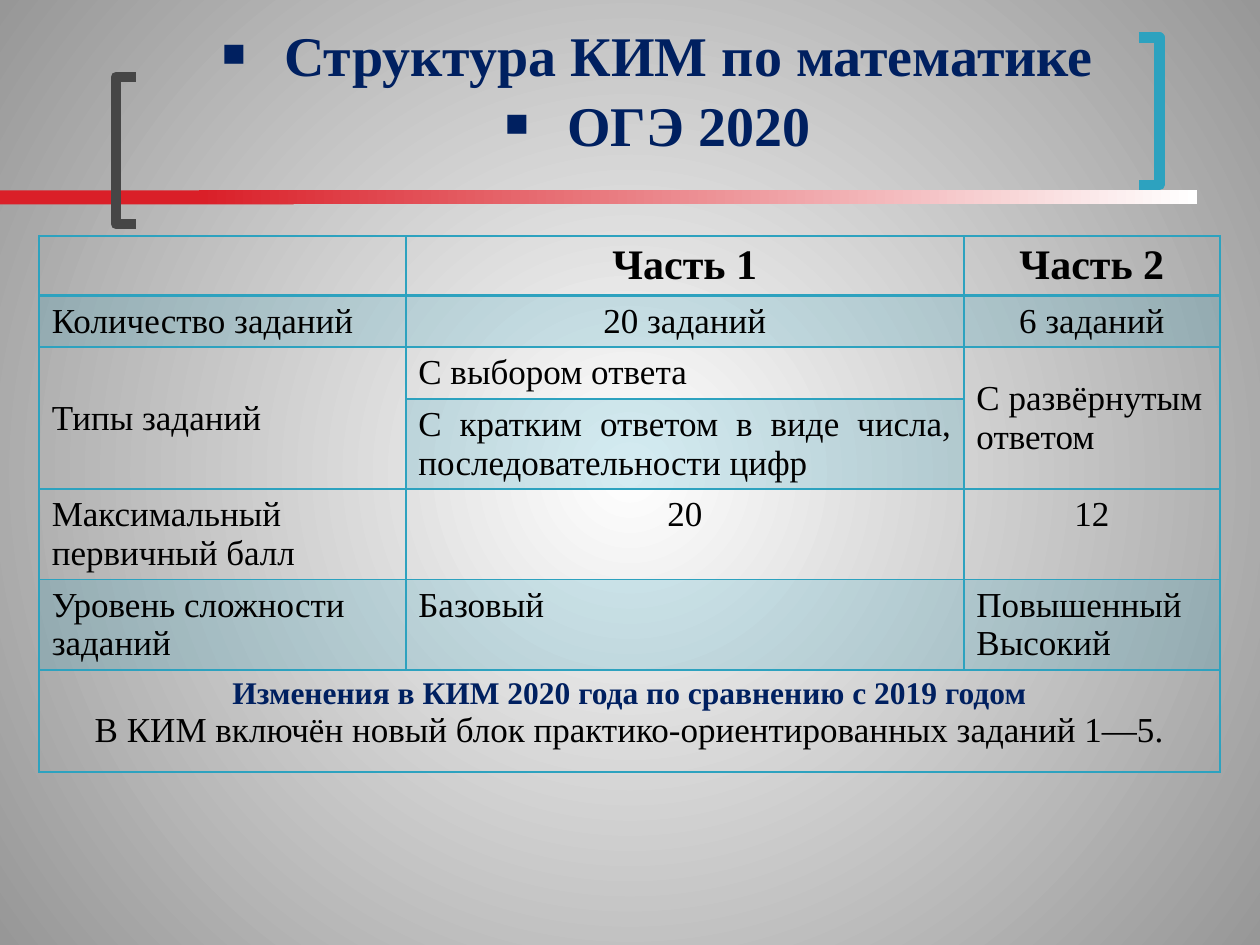
from lxml.etree import SubElement as Sub
from pptx import Presentation
from pptx.dml.color import RGBColor as Rgb
from pptx.enum.shapes import MSO_SHAPE as Kind
from pptx.enum.text import MSO_ANCHOR as Anchor, MSO_AUTO_SIZE as Auto, PP_ALIGN as Align
from pptx.oxml.ns import qn
from pptx.util import Cm, Pt

HUES = {"red": "DA1F28", "white": "FFFFFF", "edge": "979797", "grey": "464646",
        "teal": "2DA2BF", "navy": "002060", "black": "000000"}
LEFT, MID, JUST = Align.LEFT, Align.CENTER, Align.JUSTIFY


class Deck:
    """Holds the style and the current slide."""
    face = "Times New Roman"

    def __init__(self):
        self.prs = Presentation()
        self.prs.slide_width, self.prs.slide_height = Cm(25.4), Cm(19.05)
        self.slide = self.prs.slides.add_slide(self.prs.slide_layouts[5])

    def hue(self, name):
        return Rgb.from_string(HUES[name])

    def blend(self, fill, first, last):
        fill.gradient()
        for stop, name, pos in zip(fill.gradient_stops, (first, last), (0, 1)):
            stop.color.rgb, stop.position = self.hue(name), pos

    def back(self, inner, outer):
        """Fill the background with a gradient round its centre."""
        self.blend(self.slide.background.fill, inner, outer)
        grad = next(self.slide.element.iter(qn("a:gradFill")))
        grad.remove(grad.find(qn("a:lin")))
        ring = Sub(grad, qn("a:path"), path="circle")
        Sub(ring, qn("a:fillToRect"), l="50000", t="50000", r="50000", b="50000")

    def bar(self, x, y, w, h, first, last=None):
        box = self.slide.shapes.add_shape(Kind.RECTANGLE, Cm(x), Cm(y), Cm(w), Cm(h))
        box.shadow.inherit = False
        box.line.fill.background()
        if last:
            self.blend(box.fill, first, last)
            box.fill.gradient_angle = 0
        else:
            box.fill.solid()
            box.fill.fore_color.rgb = self.hue(first)

    def hook(self, tip, spine, top, base, name):
        """Draw a square bracket whose ends point from spine to tip."""
        pen = self.slide.shapes.build_freeform(Cm(tip), Cm(top))
        pen.add_line_segments([(Cm(spine), Cm(top)), (Cm(spine), Cm(base)),
                               (Cm(tip), Cm(base))], close=False)
        form = pen.convert_to_shape()
        form.shadow.inherit = False
        form.fill.background()
        form.line.color.rgb, form.line.width = self.hue(name), Pt(6)

    def words(self, frame, lines, size, align, name="black", bold=False):
        frame.text = "\n".join(lines)
        for para in frame.paragraphs:
            self.style(para, size, align, name, bold)

    def style(self, para, size, align, name, bold):
        para.alignment = align
        font = para.font
        font.name, font.size, font.bold = self.face, Pt(size), bold
        font.color.rgb = self.hue(name)

    def title(self, x, y, w, h, lines):
        head = self.slide.shapes.title
        head.left, head.top, head.width, head.height = Cm(x), Cm(y), Cm(w), Cm(h)
        frame = head.text_frame
        frame.auto_size, frame.vertical_anchor = Auto.NONE, Anchor.TOP
        self.words(frame, lines, 32, MID, "navy", True)
        for para in frame.paragraphs:
            para.space_before = Pt(1.5)
            self.mark(para)

    def mark(self, para):
        """Give the paragraph a square bullet on a hanging indent."""
        prop = para._p.get_or_add_pPr()
        prop.set("marL", str(Cm(1.25)))
        prop.set("indent", str(-Cm(1.25)))
        last = prop.find(qn("a:defRPr"))
        for tag, key, value in (("a:buSzPct", "val", "70000"),
                                ("a:buFont", "typeface", self.face),
                                ("a:buChar", "char", "■")):
            item = Sub(prop, qn(tag))
            item.set(key, value)
            last.addprevious(item)

    def grid(self, x, y, cols, rows):
        table = self.slide.shapes.add_table(len(rows), len(cols), Cm(x), Cm(y),
                                            Cm(sum(cols)), Cm(sum(rows))).table
        table.first_row = table.horz_banding = False
        for col, size in zip(table.columns, cols):
            col.width = Cm(size)
        for row, size in zip(table.rows, rows):
            row.height = Cm(size)
        return table

    def cell(self, cell, tint, top=1, base=1):
        """Set the borders, in points, and the fill of a cell."""
        prop = cell._tc.get_or_add_tcPr()
        for side, width in zip("LRTB", (1, 1, top, base)):
            line = Sub(prop, qn(f"a:ln{side}"), w=str(Pt(width)))
            Sub(Sub(line, qn("a:solidFill")), qn("a:srgbClr"), val=HUES["teal"])
        if tint:
            cell.fill.solid()
            cell.fill.fore_color.rgb = self.hue("teal")
            Sub(next(prop.find(qn("a:solidFill")).iter(qn("a:srgbClr"))),
                qn("a:alpha"), val="20000")
        else:
            cell.fill.background()


def main():
    deck = Deck()
    deck.back("white", "edge")
    deck.bar(0, 3.84, 5.92, 0.28, "red")
    deck.bar(4.01, 3.84, 20.12, 0.28, "red", "white")
    deck.hook(2.74, 2.34, 1.55, 4.52, "grey")
    deck.hook(22.96, 23.37, 0.76, 3.73, "teal")
    deck.title(2.59, 0.28, 21.34, 4.09, ["Структура КИМ по математике", "ОГЭ 2020"])

    table = deck.grid(0.79, 4.76, (7.39, 11.25, 5.16),
                      (1.2, 1.04, 1.04, 1.81, 1.81, 1.81, 2.06))
    tints = {(1, 0), (1, 1), (1, 2), (3, 1), (5, 0), (5, 1), (5, 2)}
    for r in range(len(table.rows)):
        for c in range(len(table.columns)):
            deck.cell(table.cell(r, c), (r, c) in tints,
                      2 if r == 1 else 1, 2 if r == 0 else 1)
    for first, last in (((2, 0), (3, 0)), ((2, 2), (3, 2)), ((6, 0), (6, 2))):
        table.cell(*first).merge(table.cell(*last))

    for c, text in ((1, "Часть 1"), (2, "Часть 2")):
        deck.words(table.cell(0, c).text_frame, [text], 24, MID, bold=True)
    body = [
        (1, 0, LEFT, ["Количество заданий"]),
        (1, 1, MID, ["20 заданий"]),
        (1, 2, MID, ["6 заданий"]),
        (2, 0, LEFT, ["Типы заданий"]),
        (2, 1, LEFT, ["С выбором ответа"]),
        (2, 2, LEFT, ["С развёрнутым ответом"]),
        (3, 1, JUST, ["С кратким ответом в виде числа, последовательности цифр"]),
        (4, 0, JUST, ["Максимальный", "первичный балл"]),
        (4, 1, MID, ["20"]),
        (4, 2, MID, ["12"]),
        (5, 0, LEFT, ["Уровень сложности заданий"]),
        (5, 1, LEFT, ["Базовый"]),
        (5, 2, LEFT, ["Повышенный", "Высокий"]),
        (6, 0, MID, ["Изменения в КИМ 2020 года по сравнению с 2019 годом",
                     "В КИМ включён новый блок практико-ориентированных заданий 1—5."]),
    ]
    for r, c, align, lines in body:
        deck.words(table.cell(r, c).text_frame, lines, 20, align)
    for c in (0, 2):
        table.cell(2, c).vertical_anchor = Anchor.MIDDLE
    deck.style(table.cell(6, 0).text_frame.paragraphs[0], 18, MID, "navy", True)

    deck.prs.save("out.pptx")


if __name__ == "__main__":
    main()
